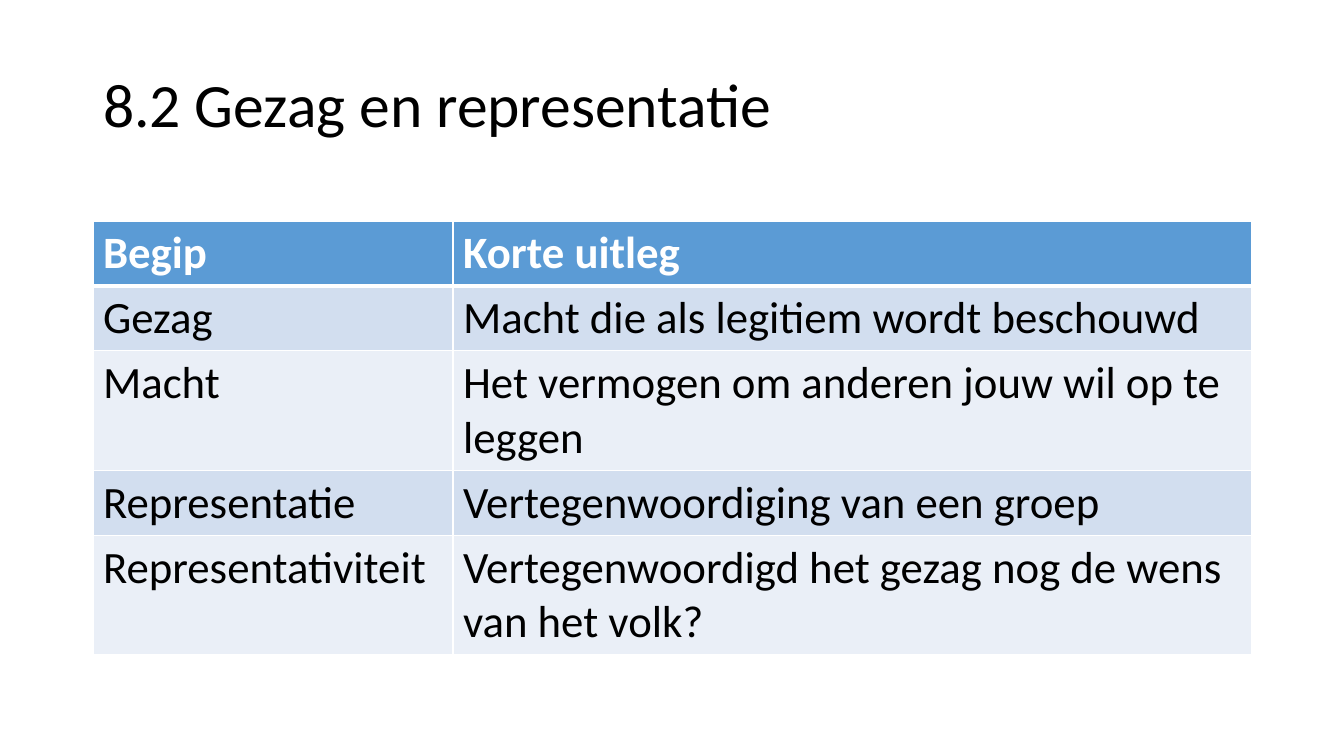
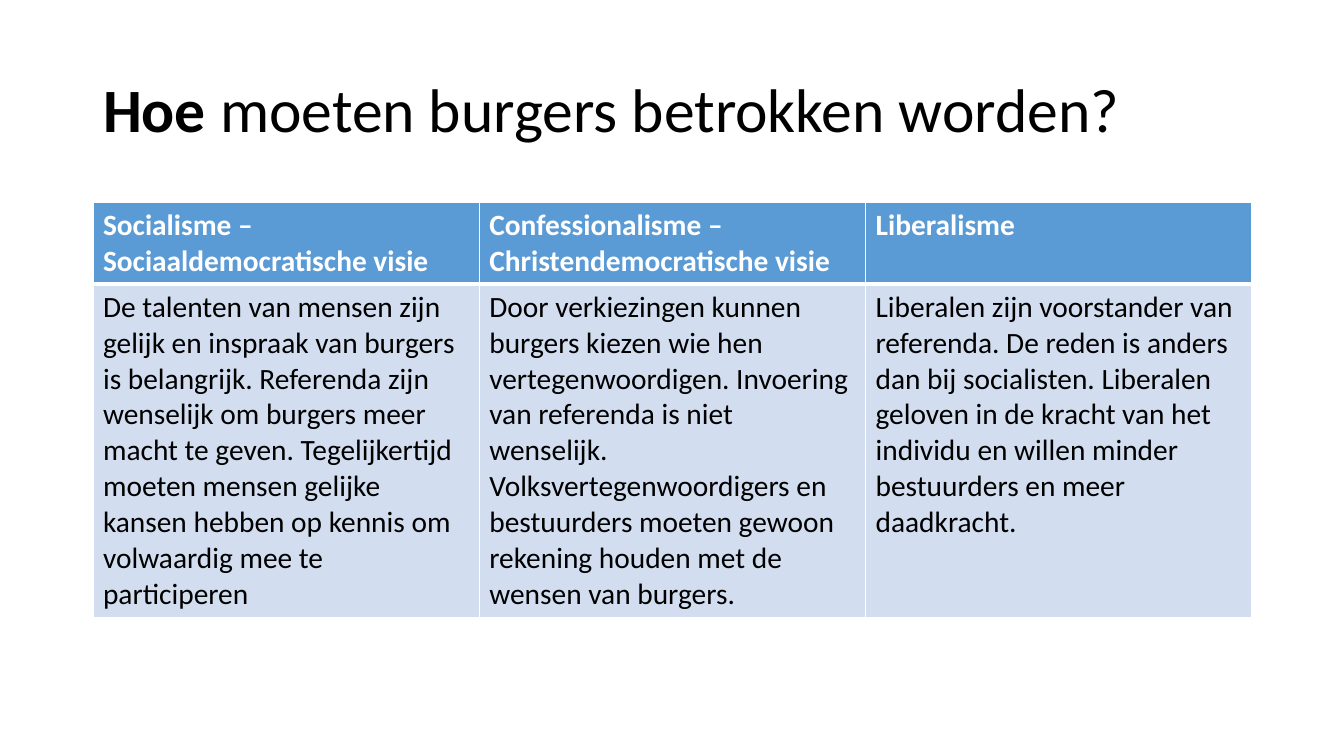
from lxml import etree
from pptx import Presentation
from pptx.dml.color import RGBColor
from pptx.enum.text import MSO_ANCHOR, MSO_AUTO_SIZE, PP_ALIGN
from pptx.oxml.ns import qn
from pptx.util import Pt

LEFT = PP_ALIGN.LEFT
MIDDLE = MSO_ANCHOR.MIDDLE
FIXED = MSO_AUTO_SIZE.NONE

# Shared look
SCALE = 914400 / 100.8
FONT = "Calibri"
BLACK, WHITE = "000000", "FFFFFF"
HEAD, BANDS = "5B9BD5", ("D2DEEF", "EAEFF7")
EDGE, WIDE = 93, 1159
TITLE_H = 146
THIN, THICK = 12700, 38100


def px(n):
    return round(n * SCALE)


def color(code):
    return RGBColor.from_string(code)


# Titles are lists of (text, bold) runs
slides = [
    {
        "title": [("8.2 Gezag en representatie", False)],
        "title_y": 35,
        "table_y": 221,
        "size": 32,
        "cols": [360, 799],
        "rows": [64, 64, 119, 64, 119],
        "cells": [
            ["Begip", "Korte uitleg"],
            ["Gezag", "Macht die als legitiem wordt beschouwd"],
            ["Macht", "Het vermogen om anderen jouw wil op te leggen"],
            ["Representatie", "Vertegenwoordiging van een groep"],
            ["Representativiteit",
             "Vertegenwoordigd het gezag nog de wens van het volk?"],
        ],
    },
    {
        "title": [("Hoe", True),
                  (" moeten burgers betrokken worden?", False)],
        "title_y": 40,
        "table_y": 202,
        "size": 21,
        "cols": [WIDE / 3] * 3,
        "rows": [81, 333],
        "cells": [
            ["Socialisme –\nSociaaldemocratische visie",
             "Confessionalisme –\nChristendemocratische visie",
             "Liberalisme"],
            ["De talenten van mensen zijn gelijk en inspraak van burgers is "
             "belangrijk. Referenda zijn wenselijk om burgers meer macht te "
             "geven. Tegelijkertijd moeten mensen gelijke kansen hebben op "
             "kennis om volwaardig mee te participeren",
             "Door verkiezingen kunnen burgers kiezen wie hen "
             "vertegenwoordigen. Invoering van referenda is niet wenselijk. "
             "Volksvertegenwoordigers en bestuurders moeten gewoon rekening "
             "houden met de wensen van burgers.",
             "Liberalen zijn voorstander van referenda. De reden is anders "
             "dan bij socialisten. Liberalen geloven in de kracht van het "
             "individu en willen minder bestuurders en meer daadkracht."],
        ],
    },
]

deck = Presentation()
deck.slide_width, deck.slide_height = px(1344), px(756)
layout = deck.slide_layouts[5]

for data in slides:
    slide = deck.slides.add_slide(layout)

    # Title
    title = slide.shapes.title
    title.left, title.top = px(EDGE), px(data["title_y"])
    title.width, title.height = px(WIDE), px(TITLE_H)
    frame = title.text_frame
    frame.word_wrap = True
    frame.auto_size = FIXED
    frame.vertical_anchor = MIDDLE
    para = frame.paragraphs[0]
    para.alignment = LEFT
    para.line_spacing = 0.9
    para.font.name, para.font.size = FONT, Pt(44)
    para.font.color.rgb = color(BLACK)
    for text, bold in data["title"]:
        run = para.add_run()
        run.text = text
        run.font.bold = bold

    # Table grid
    cols, rows = data["cols"], data["rows"]
    table = slide.shapes.add_table(
        len(rows), len(cols), px(EDGE), px(data["table_y"]),
        px(WIDE), px(sum(rows))).table
    for col, width in zip(table.columns, cols):
        col.width = px(width)
    for row, height in zip(table.rows, rows):
        row.height = px(height)

    # Cells: white borders, with a thick rule under the header
    for r, line in enumerate(data["cells"]):
        head = r == 0
        for c, text in enumerate(line):
            cell = table.cell(r, c)
            cell.text = text
            props = cell._tc.get_or_add_tcPr()
            for side in ("lnL", "lnR", "lnT", "lnB"):
                thick = (r, side) in ((0, "lnB"), (1, "lnT"))
                border = etree.SubElement(props, qn("a:" + side),
                                          w=str(THICK if thick else THIN))
                paint = etree.SubElement(border, qn("a:solidFill"))
                etree.SubElement(paint, qn("a:srgbClr"), val=WHITE)
            cell.fill.solid()
            cell.fill.fore_color.rgb = color(
                HEAD if head else BANDS[(r - 1) % 2])
            for para in cell.text_frame.paragraphs:
                font = para.font
                font.name, font.size = FONT, Pt(data["size"])
                font.bold = head
                font.color.rgb = color(WHITE if head else BLACK)

deck.save("out.pptx")
